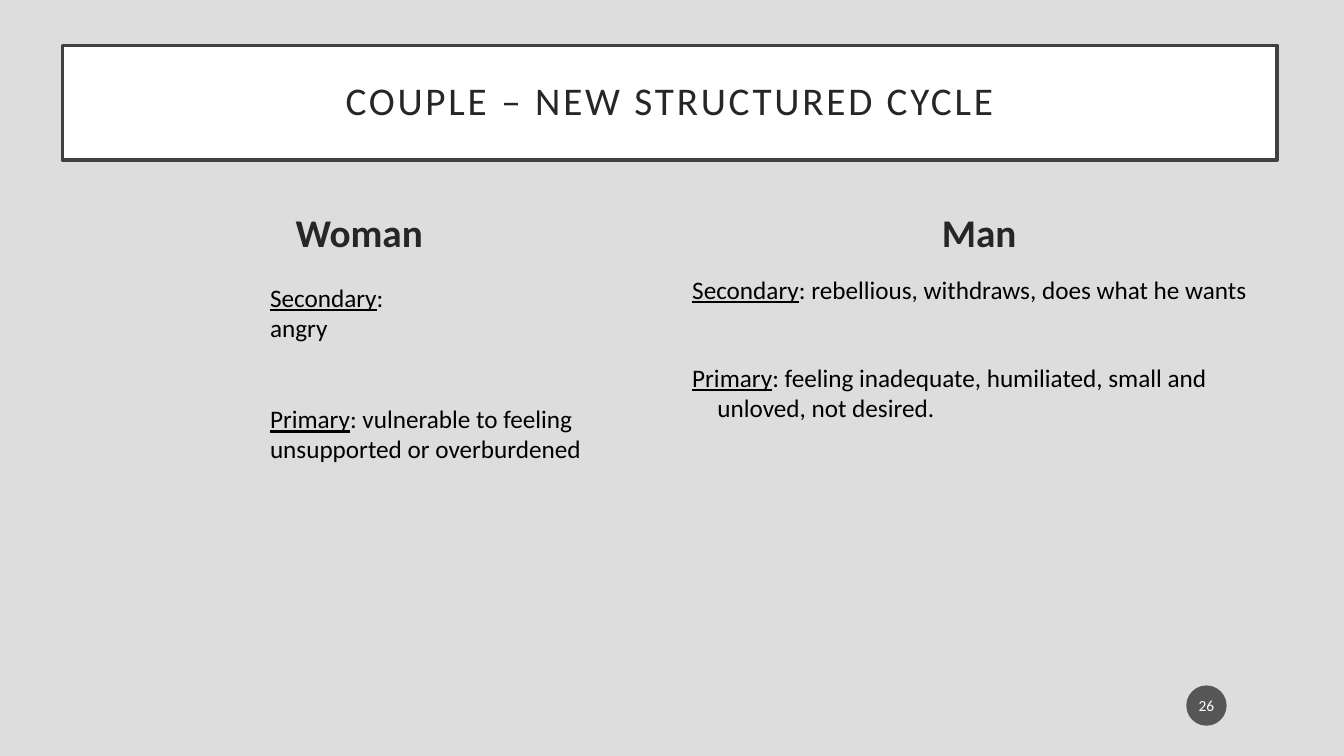
from dataclasses import dataclass

from lxml.etree import SubElement
from pptx import Presentation
from pptx.dml.color import RGBColor
from pptx.enum.shapes import MSO_AUTO_SHAPE_TYPE as ShapeType
from pptx.enum.text import MSO_ANCHOR as Anchor, PP_ALIGN as Align
from pptx.oxml.ns import qn
from pptx.shapes.autoshape import Shape
from pptx.slide import Slide
from pptx.util import Pt

FONT = "Calibri"
INK = "262626"
BLACK = "000000"
WHITE = "FFFFFF"


@dataclass(frozen=True)
class Box:
    left: float
    top: float
    width: float
    height: float


@dataclass(frozen=True)
class Words:
    text: str
    size: float = 18
    color: str = BLACK
    bold: bool = False
    underline: bool = False
    tracking: float = 0


@dataclass(frozen=True)
class Para:
    words: tuple[Words, ...]
    align: Align = Align.LEFT
    before: float = 0
    hanging: float = 0
    line_spacing: float = 1.0


@dataclass(frozen=True)
class TextBlock:
    box: Box
    paras: tuple[Para, ...]
    anchor: Anchor = Anchor.TOP
    inset_x: float = 7.2
    inset_y: float = 3.6


def rgb(value: str) -> RGBColor:
    return RGBColor.from_string(value)


def emotion(label: str, detail: str, before: float = 0, hanging: float = 0) -> Para:
    return Para((Words(label, underline=True), Words(detail)), before=before, hanging=hanging)


def heading(left: float, partner: str) -> TextBlock:
    name = Words(partner, 28, INK, bold=True)
    return TextBlock(Box(left, 135.4, 424, 50.4), (Para((name,), Align.CENTER, 10),), Anchor.BOTTOM)


def write(shape: Shape, block: TextBlock) -> None:
    frame = shape.text_frame
    frame.word_wrap = True
    frame.vertical_anchor = block.anchor
    frame.margin_left = frame.margin_right = Pt(block.inset_x)
    frame.margin_top = frame.margin_bottom = Pt(block.inset_y)
    for index, para in enumerate(block.paras):
        line = frame.add_paragraph() if index else frame.paragraphs[0]
        line.alignment = para.align
        line.space_before = Pt(para.before)
        line.line_spacing = para.line_spacing
        if para.hanging:
            props = line._p.get_or_add_pPr()
            props.set("marL", str(Pt(para.hanging)))
            props.set("indent", str(-Pt(para.hanging)))
        for words in para.words:
            run = line.add_run()
            run.text = words.text
            font = run.font
            font.name = FONT
            font.size = Pt(words.size)
            font.bold = words.bold
            font.underline = words.underline
            font.color.rgb = rgb(words.color)
            if words.tracking:
                run._r.get_or_add_rPr().set("spc", str(round(words.tracking * 100)))


def add_text(slide: Slide, block: TextBlock) -> None:
    box = block.box
    write(slide.shapes.add_textbox(Pt(box.left), Pt(box.top), Pt(box.width), Pt(box.height)), block)


def add_panel(slide: Slide, kind: ShapeType, fill: str, block: TextBlock) -> Shape:
    box = block.box
    panel = slide.shapes.add_shape(kind, Pt(box.left), Pt(box.top), Pt(box.width), Pt(box.height))
    panel.shadow.inherit = False
    panel.fill.solid()
    panel.fill.fore_color.rgb = rgb(fill)
    panel.line.fill.background()
    write(panel, block)
    return panel


TITLE = TextBlock(
    Box(44.6, 32.4, 867.6, 82),
    (Para((Words("COUPLE – NEW STRUCTURED CYCLE", 28, INK, tracking=2),), Align.CENTER, line_spacing=0.9),),
    Anchor.MIDDLE, 14.4, 14.4,
)
MAN_EMOTIONS = TextBlock(
    Box(487.4, 192.2, 424, 290.2),
    (
        emotion("Secondary", ": rebellious, withdraws, does what he wants", 10, 18),
        emotion("Primary", ": feeling inadequate, humiliated, small and unloved, not desired.", 41.5, 18),
    ),
)
WOMAN_EMOTIONS = TextBlock(
    Box(185.8, 198, 312.5, 138.2),
    (
        emotion("Secondary", ":"),
        Para((Words("angry"),)),
        emotion("Primary", ": vulnerable to feeling unsupported or overburdened", 43.5),
    ),
)
PAGE_NUMBER = TextBlock(
    Box(847.4, 489.6, 28.8, 28.8),
    (Para((Words("26", 11, WHITE),), Align.CENTER),),
    Anchor.MIDDLE, 1.44, 3.6,
)


def main() -> None:
    deck = Presentation()
    deck.slide_width, deck.slide_height = Pt(960), Pt(540)
    slide = deck.slides.add_slide(deck.slide_layouts[6])
    slide.background.fill.solid()
    slide.background.fill.fore_color.rgb = rgb("DDDDDD")

    title = add_panel(slide, ShapeType.RECTANGLE, WHITE, TITLE)
    title.line.color.rgb = rgb("404040")
    title.line.width = Pt(2.5)

    for block in (heading(44.6, "Woman"), heading(487.4, "Man"), MAN_EMOTIONS, WOMAN_EMOTIONS):
        add_text(slide, block)

    badge = add_panel(slide, ShapeType.OVAL, "1D1D1D", PAGE_NUMBER)
    tint = badge.fill._xPr.find(qn("a:solidFill")).find(qn("a:srgbClr"))
    SubElement(tint, qn("a:alpha")).set("val", "70000")

    deck.save("out.pptx")


if __name__ == "__main__":
    main()
